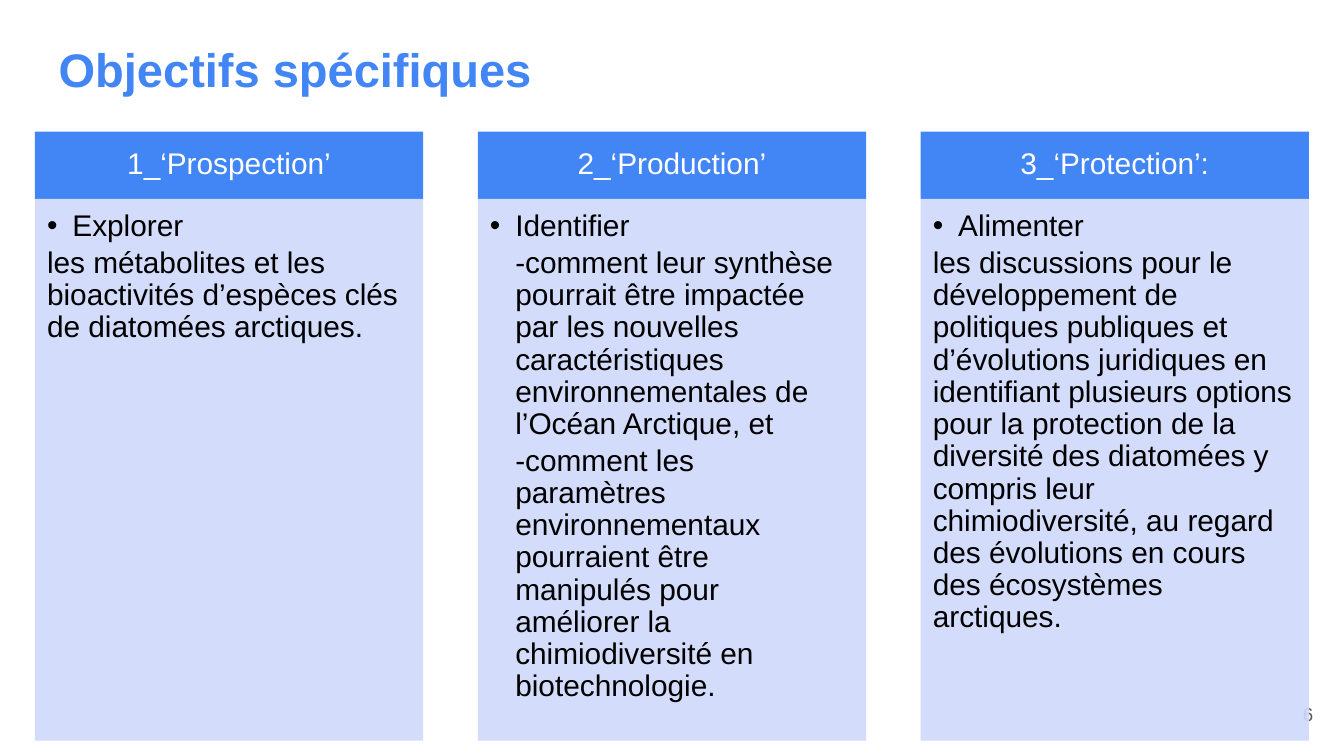
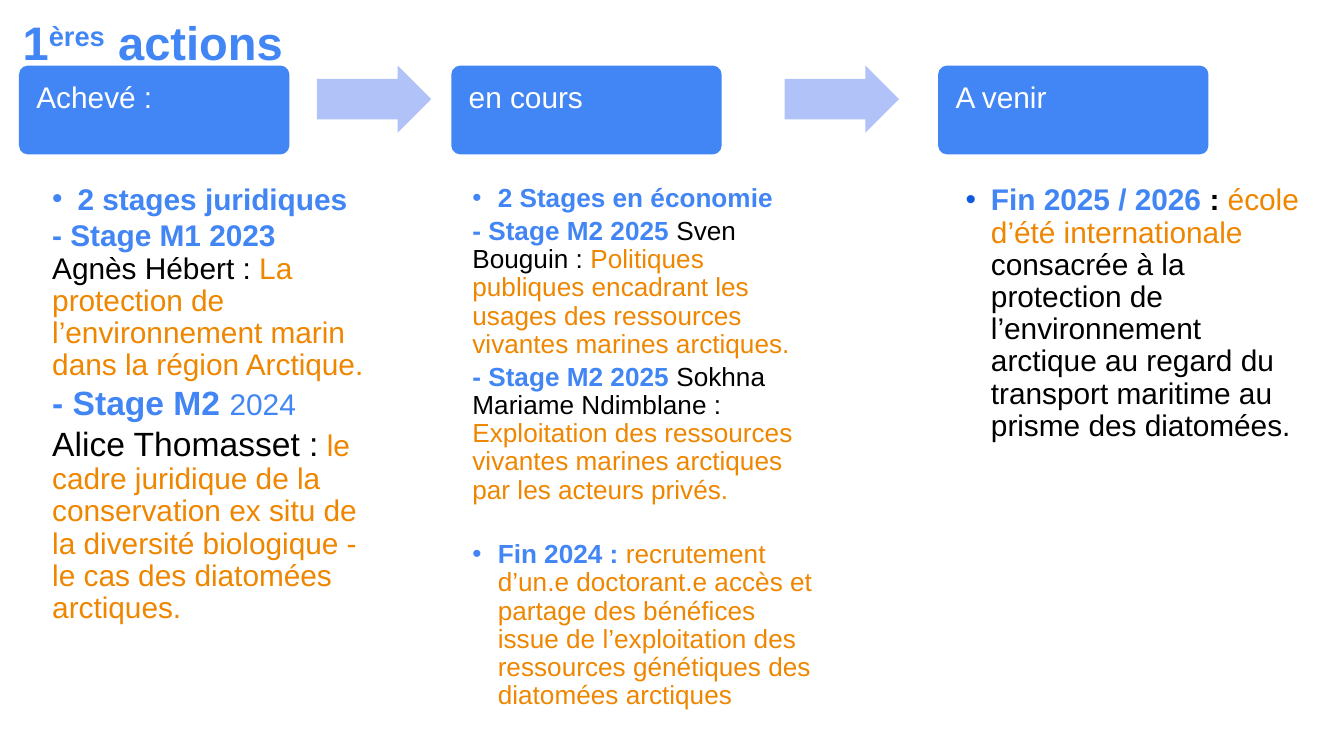
import pptx
import pptx.util
import pptx.dml.color
import pptx.enum.shapes
import pptx.enum.text
import pptx.oxml.ns
from lxml import etree
from dataclasses import dataclass

Cm, Pt = pptx.util.Cm, pptx.util.Pt
Kind = pptx.enum.shapes.MSO_SHAPE
Align = pptx.enum.text.PP_ALIGN
Anchor = pptx.enum.text.MSO_ANCHOR
qn = pptx.oxml.ns.qn


@dataclass(frozen=True)
class Theme:
    font: str = "Arial"
    blue: str = "4285F4"
    deep: str = "0D5BDC"
    pale: str = "CFD9FB"
    arrow: str = "B0C2F8"
    orange: str = "EF8600"
    black: str = "000000"
    white: str = "FFFFFF"
    grey: str = "595959"
    title: float = 25.2
    large: float = 18
    text: float = 16
    small: float = 14
    foot: float = 10
    indent: float = 0.48


T = Theme()

# Run tones: colour and bold
TONES = {
    "key": (T.blue, True), "year": (T.blue, False), "plain": (T.black, False),
    "strong": (T.black, True), "topic": (T.orange, False),
    "head": (T.white, False), "foot": (T.grey, False),
}

# Content: a paragraph is (kind, runs), a run is (text, tone[, size])
GOALS = [
    ("1_‘Prospection’", [
        ("dot", [("Explorer", "plain")]),
        ("flush", [("les métabolites et les bioactivités d’espèces clés de diatomées arctiques.", "plain")]),
    ]),
    ("2_‘Production’", [
        ("dot", [("Identifier", "plain")]),
        ("inner", [("-comment leur synthèse pourrait être impactée par les nouvelles caractéristiques "
                    "environnementales de l’Océan Arctique, et", "plain")]),
        ("inner", [("-comment les paramètres environnementaux pourraient être manipulés pour améliorer "
                    "la chimiodiversité en biotechnologie.", "plain")]),
    ]),
    ("3_‘Protection’:", [
        ("dot", [("Alimenter", "plain")]),
        ("flush", [("les discussions pour le développement de politiques publiques et d’évolutions "
                    "juridiques en identifiant plusieurs options pour la protection de la diversité des "
                    "diatomées y compris leur chimiodiversité, au regard des évolutions en cours des "
                    "écosystèmes arctiques.", "plain")]),
    ]),
]

# Step: header, header left, body left, body width, text size, bullet colour, paragraphs
STEPS = [
    ("Achevé :", 0.36, 0.48, 7.11, T.text, T.blue, [
        ("dot", [("2 stages juridiques", "key")]),
        ("flush", [("- Stage M1 2023  ", "key"), ("Agnès Hébert : ", "plain"),
                   ("La protection de l’environnement marin dans la région Arctique.", "topic")]),
        ("flush", [("- Stage M2 ", "key", T.large), ("2024", "year")]),
        ("flush", [("Alice Thomasset :", "plain", T.large), (" ", "plain"),
                   ("le cadre juridique de la conservation ex situ de la diversité biologique - "
                    "le cas des diatomées arctiques.", "topic")]),
    ]),
    ("en cours ", 8.53, 8.41, 7.49, T.small, T.blue, [
        ("dot", [("2 Stages en économie", "key")]),
        ("flush", [("- Stage M2 2025 ", "key"), ("Sven Bouguin : ", "plain"),
                   ("Politiques publiques encadrant les usages des ressources vivantes marines "
                    "arctiques.", "topic")]),
        ("flush", [("- Stage M2 2025 ", "key"), ("Sokhna Mariame Ndimblane : ", "plain"),
                   ("Exploitation des ressources vivantes marines arctiques par les acteurs "
                    "privés.", "topic")]),
        ("apart", [("Fin 2024 : ", "key"),
                   ("recrutement d’un.e doctorant.e accès et partage des bénéfices issue de "
                    "l’exploitation des ressources génétiques des diatomées arctiques", "topic")]),
    ]),
    ("A venir", 17.73, 17.73, 7.49, T.text, T.deep, [
        ("dot", [("Fin 2025 / 2026", "key"), (" : ", "strong"),
                 ("école d’été internationale ", "topic"),
                 ("consacrée à la protection de l’environnement arctique au regard du transport "
                  "maritime au prisme des diatomées.", "plain")]),
    ]),
]
ARROWS = [5.99, 14.83]


def rgb(code):
    return pptx.dml.color.RGBColor.from_string(code)


def style(run, tone, size):
    font = run.font
    colour, font.bold = TONES[tone]
    font.name, font.size = T.font, Pt(size)
    font.color.rgb = rgb(colour)


def frame(shape, pads, anchor=Anchor.TOP):
    tf = shape.text_frame
    tf.word_wrap = True
    tf.vertical_anchor = anchor
    (tf.margin_left, tf.margin_top,
     tf.margin_right, tf.margin_bottom) = (Cm(pad) for pad in pads)
    return tf


def box(slide, kind, area, fill, alpha=100, adj=()):
    shape = slide.shapes.add_shape(kind, *(Cm(v) for v in area))
    shape.shadow.inherit = False
    shape.line.fill.background()
    shape.fill.solid()
    shape.fill.fore_color.rgb = rgb(fill)
    if alpha < 100:
        clr = shape.fill._xPr.find(qn("a:solidFill"))[0]
        etree.SubElement(clr, qn("a:alpha"), val=str(alpha * 1000))
    for i, value in enumerate(adj):
        shape.adjustments[i] = value
    return shape


def label(slide, area, text, tone, size, align=Align.LEFT, anchor=Anchor.TOP):
    shape = slide.shapes.add_textbox(*(Cm(v) for v in area))
    tf = frame(shape, [0.25] * 4, anchor)
    tf.text = text
    para = tf.paragraphs[0]
    para.alignment = align
    style(para.runs[0], tone, size)
    return para


def title(slide, left, top, text):
    return label(slide, (left, top, 23.67, 1.6), text, "key", T.title)


def header(shape, text, pads, align, anchor):
    tf = frame(shape, pads, anchor)
    tf.text = text
    para = tf.paragraphs[0]
    para.alignment, para.line_spacing, para.space_after = align, 0.9, Pt(5.6)
    style(para.runs[0], "head", T.text)


def write(tf, paras, size, dot):
    for i, (kind, runs) in enumerate(paras):
        para = tf.add_paragraph() if i else tf.paragraphs[0]
        para.alignment, para.line_spacing, para.space_after = Align.LEFT, 0.9, Pt(2.4)
        if kind == "apart":
            para.space_before = Pt(17)
        for text, tone, *own in runs:
            run = para.add_run()
            run.text = text
            style(run, tone, own[0] if own else size)
        # Indents and bullet
        ppr = para._p.get_or_add_pPr()
        marked = kind in ("dot", "apart")
        ppr.set("marL", str(0 if kind == "flush" else Cm(T.indent)))
        ppr.set("indent", str(-Cm(T.indent) if marked else 0))
        if marked:
            clr = etree.SubElement(ppr, qn("a:buClr"))
            etree.SubElement(clr, qn("a:srgbClr"), val=dot)
            etree.SubElement(ppr, qn("a:buFont"), typeface=T.font)
            etree.SubElement(ppr, qn("a:buChar"), char="•")
        else:
            etree.SubElement(ppr, qn("a:buNone"))


def goals(slide):
    title(slide, 0.86, 0.51, "Objectifs spécifiques")
    label(slide, (23.55, 12.95, 1.52, 1.09), "6", "foot", T.foot, Align.RIGHT, Anchor.MIDDLE)
    # Three equal columns
    left, pitch, wide, top, high = 0.66, 8.37, 7.34, 2.49, 1.27
    for i, (head, paras) in enumerate(GOALS):
        x = left + i * pitch
        bar = box(slide, Kind.RECTANGLE, (x, top, wide, high), T.blue)
        header(bar, head, (0.3, 0.18, 0.3, 0.18), Align.CENTER, Anchor.MIDDLE)
        body = box(slide, Kind.RECTANGLE, (x, top + high, wide, 10.24), T.pale, 90)
        write(frame(body, (0.23, 0.23, 0.3, 0.36)), paras, T.text, T.black)


def steps(slide):
    para = title(slide, 0.18, 0, "1")
    for text, base in (("ères", 30000), (" actions", 0)):
        run = para.add_run()
        run.text = text
        style(run, "key", T.title)
        run.font._element.set("baseline", str(base))
    # Step headers with their details below
    top = 1.24
    for head, x, left, wide, size, dot, paras in STEPS:
        bar = box(slide, Kind.ROUNDED_RECTANGLE, (x, top, 5.11, 1.68), T.blue, adj=[0.1])
        header(bar, head, (0.28, 0.28, 0.28, 0.69), Align.LEFT, Anchor.TOP)
        body = box(slide, Kind.ROUNDED_RECTANGLE, (left, 2.98, wide, 11.3), T.white, 90, [0.1])
        write(frame(body, [0.3] * 4), paras, size, dot)
    # Arrows between the steps
    for x in ARROWS:
        box(slide, Kind.RIGHT_ARROW, (x, top, 2.16, 1.27), T.arrow, adj=[0.6, 0.5])


def main():
    deck = pptx.Presentation()
    deck.slide_width, deck.slide_height = Cm(25.4), Cm(14.29)
    for build in (goals, steps):
        build(deck.slides.add_slide(deck.slide_layouts[6]))
    deck.save("out.pptx")


if __name__ == "__main__":
    main()
